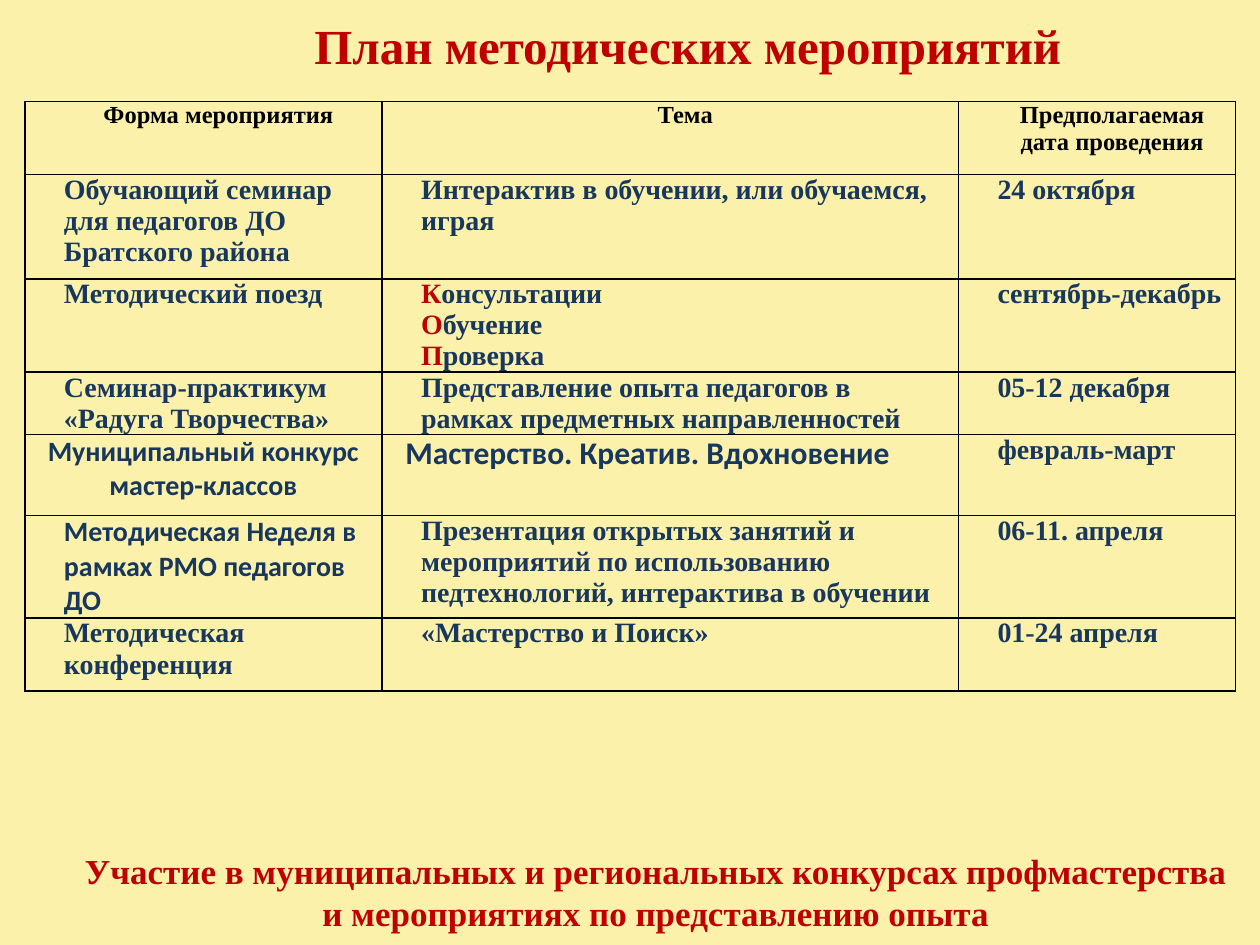
from dataclasses import dataclass
from typing import Any

from lxml.etree import SubElement
from pptx import Presentation
from pptx.dml.color import RGBColor
from pptx.enum.text import MSO_ANCHOR, MSO_AUTO_SIZE, PP_ALIGN
from pptx.oxml.ns import qn
from pptx.util import Cm, Pt

CREAM = RGBColor(0xFB, 0xF1, 0xAB)
RED = RGBColor(0xC0, 0x00, 0x00)
NAVY = RGBColor(0x17, 0x37, 0x5E)
BLACK = RGBColor(0x00, 0x00, 0x00)

SERIF = "Times New Roman"
SANS = "Calibri"

COLUMN_WIDTHS = [7.2, 11.62, 5.59]
ROW_HEIGHTS = [1.47, 2.1, 1.47, 0.23, 1.63, 1.47, 1.47]
COLUMN_ALIGNMENTS = [PP_ALIGN.LEFT, PP_ALIGN.LEFT, PP_ALIGN.JUSTIFY]
HEADERS = ["Форма мероприятия", "Тема", "Предполагаемая дата проведения"]
EVENTS = [
    ["Обучающий семинар для педагогов ДО Братского района",
     "Интерактив в обучении, или обучаемся, играя", "24 октября"],
    ["Методический поезд", ["Консультации", "Обучение", "Проверка"], "сентябрь-декабрь"],
    ["Семинар-практикум «Радуга Творчества»",
     "Представление опыта педагогов в рамках предметных направленностей", "05-12 декабря"],
    ["Муниципальный конкурс мастер-классов",
     "Мастерство. Креатив. Вдохновение", "февраль-март"],
    ["Методическая Неделя в рамках РМО педагогов ДО",
     "Презентация открытых занятий и мероприятий по использованию педтехнологий, "
     "интерактива в обучении", "06-11. апреля"],
    ["Методическая конференция", "«Мастерство и Поиск»", "01-24 апреля"],
]
SPECIAL_STYLES = {
    (4, 0): {"name": SANS, "alignment": PP_ALIGN.CENTER, "indent": 0},
    (4, 1): {"name": SANS, "size": 18, "indent": 0.29},
    (5, 0): {"name": SANS},
}


@dataclass
class PlanSlide:
    slide: Any
    accent: RGBColor = RED
    text_color: RGBColor = NAVY
    border_color: RGBColor = BLACK

    def background(self, color):
        self.slide.background.fill.solid()
        self.slide.background.fill.fore_color.rgb = color

    def paragraph(self, para, text, size, color, name=SERIF, alignment=PP_ALIGN.CENTER,
                  indent=0, accent_initial=False):
        para.alignment = alignment
        if indent:
            para._p.get_or_add_pPr().set("marL", str(Cm(indent)))
        para.font.name = name
        para.font.size = Pt(size)
        para.font.bold = True
        para.font.color.rgb = color
        pieces = [text[0], text[1:]] if accent_initial else [text]
        for piece in pieces:
            para.add_run().text = piece
        if accent_initial:
            para.runs[0].font.color.rgb = self.accent

    def paragraphs(self, frame, lines, **style):
        for index, line in enumerate(lines):
            para = frame.add_paragraph() if index else frame.paragraphs[0]
            self.paragraph(para, line, **style)

    def title(self, text, left, top, width, height):
        box = self.slide.shapes.title
        box.left, box.top, box.width, box.height = Cm(left), Cm(top), Cm(width), Cm(height)
        box.text_frame.vertical_anchor = MSO_ANCHOR.MIDDLE
        self.paragraphs(box.text_frame, [text], size=28, color=self.accent)

    def footer(self, lines, left, top, width, height):
        box = self.slide.shapes.add_textbox(Cm(left), Cm(top), Cm(width), Cm(height))
        box.text_frame.word_wrap = False
        box.text_frame.auto_size = MSO_AUTO_SIZE.SHAPE_TO_FIT_TEXT
        self.paragraphs(box.text_frame, lines, size=20, color=self.accent)

    def borders(self, cell):
        properties = cell._tc.get_or_add_tcPr()
        for side in ("a:lnL", "a:lnR", "a:lnT", "a:lnB"):
            line = SubElement(properties, qn(side), w=str(Pt(1)))
            fill = SubElement(line, qn("a:solidFill"))
            SubElement(fill, qn("a:srgbClr"), val=str(self.border_color))

    def cell(self, cell, content, style):
        self.borders(cell)
        cell.fill.background()
        cell.margin_left = cell.margin_right = Cm(0.18)
        cell.margin_top = cell.margin_bottom = 0
        is_acrostic = isinstance(content, list)
        lines = content if is_acrostic else [content]
        self.paragraphs(cell.text_frame, lines, accent_initial=is_acrostic, **style)

    def table(self, rows, left, top):
        table = self.slide.shapes.add_table(
            len(rows), len(COLUMN_WIDTHS), Cm(left), Cm(top),
            Cm(sum(COLUMN_WIDTHS)), Cm(sum(ROW_HEIGHTS))).table
        table.first_row = table.horz_banding = False
        for column, width in zip(table.columns, COLUMN_WIDTHS):
            column.width = Cm(width)
        for row, height in zip(table.rows, ROW_HEIGHTS):
            row.height = Cm(height)
        for r, contents in enumerate(rows):
            for c, content in enumerate(contents):
                if r == 0:
                    style = {"size": 14, "color": BLACK, "indent": 0.61}
                else:
                    style = {"size": 16, "color": self.text_color, "indent": 0.61,
                             "alignment": COLUMN_ALIGNMENTS[c]}
                self.cell(table.cell(r, c), content, style | SPECIAL_STYLES.get((r, c), {}))


def main():
    deck = Presentation()
    deck.slide_width, deck.slide_height = Cm(25.4), Cm(19.05)
    page = PlanSlide(deck.slides.add_slide(deck.slide_layouts[5]))
    page.background(CREAM)
    page.title("План методических мероприятий", 3.5, 0, 20.73, 1.8)
    page.table([HEADERS] + EVENTS, 0.5, 2.05)
    page.footer(["Участие в муниципальных и региональных конкурсах профмастерства",
                 "и мероприятиях по представлению опыта"], 1.27, 17, 23.9, 1.96)
    deck.save("out.pptx")


if __name__ == "__main__":
    main()
